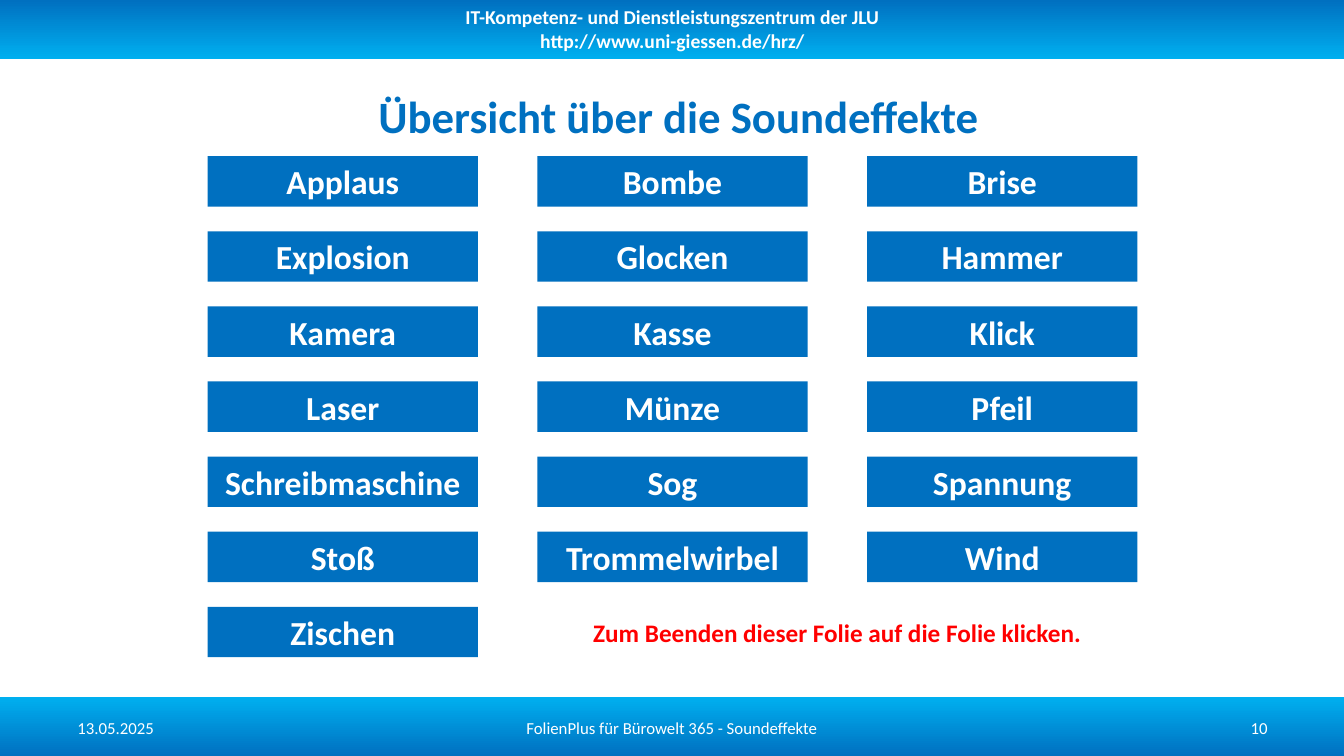
from pptx import Presentation
from pptx.dml.color import RGBColor
from pptx.enum.shapes import MSO_SHAPE as Shape
from pptx.enum.text import MSO_ANCHOR as Anchor, PP_ALIGN as Align
from pptx.util import Inches, Pt

BLUE, LIGHT_BLUE, WHITE, RED = "0070C0", "00B0F0", "FFFFFF", "FF0000"
WIDTH, HEIGHT, BAND_HEIGHT = 13.33, 7.5, 0.59
SOUNDS = [
    "Applaus", "Bombe", "Brise",
    "Explosion", "Glocken", "Hammer",
    "Kamera", "Kasse", "Klick",
    "Laser", "Münze", "Pfeil",
    "Schreibmaschine", "Sog", "Spannung",
    "Stoß", "Trommelwirbel", "Wind",
    "Zischen",
]


def color(value):
    """Turn a hex string into a colour."""
    return RGBColor.from_string(value)


def write(shape, text, size, text_color, bold=True, align=Align.CENTER, anchor=Anchor.MIDDLE):
    """Put formatted text into a shape."""
    frame = shape.text_frame
    frame.word_wrap = True
    frame.vertical_anchor = anchor
    paragraph = frame.paragraphs[0]
    paragraph.text = text
    paragraph.alignment = align
    font_format = {"name": "Calibri", "size": Pt(size), "bold": bold}
    for run in paragraph.runs:
        for name, value in font_format.items():
            setattr(run.font, name, value)
        run.font.color.rgb = color(text_color)


def add_text(slide, box, text, size, text_color, **options):
    """Add a text box at the given left, top, width and height."""
    shape = slide.shapes.add_textbox(*map(Inches, box))
    write(shape, text, size, text_color, **options)


def add_rectangle(slide, box):
    """Add a rectangle without line or shadow."""
    shape = slide.shapes.add_shape(Shape.RECTANGLE, *map(Inches, box))
    shape.shadow.inherit = False
    shape.line.fill.background()
    return shape


def add_band(slide, box, stop_colors):
    """Add a band with a gradient from top to bottom."""
    fill = add_rectangle(slide, box).fill
    fill.gradient()
    fill.gradient_angle = 270
    for stop, stop_color in zip(fill.gradient_stops, stop_colors):
        stop.color.rgb = color(stop_color)


def add_header(slide, box):
    """Add the top band with the name of the centre."""
    left, top, width, height = box
    add_band(slide, box, (BLUE, LIGHT_BLUE))
    text = "IT-Kompetenz- und Dienstleistungszentrum der JLU\nhttp://www.uni-giessen.de/hrz/"
    add_text(slide, (left + 3.7, top, 5.94, 0.57), text, 14, WHITE, anchor=Anchor.TOP)


def add_footer(slide, box):
    """Add the bottom band with date, topic and slide number."""
    left, top, width, height = box
    add_band(slide, box, (LIGHT_BLUE, BLUE))
    entries = [
        (0.67, 2.12, "13.05.2025", Align.LEFT),
        (2.73, 7.87, "FolienPlus für Bürowelt 365 - Soundeffekte", Align.CENTER),
        (11.08, 1.59, "10", Align.RIGHT),
    ]
    for offset, entry_width, text, align in entries:
        entry_box = (left + offset, top + 0.11, entry_width, 0.4)
        add_text(slide, entry_box, text, 12, WHITE, bold=False, align=align)


def add_sound_buttons(slide, box, columns=3):
    """Add the grid of sound buttons and the closing hint beside the last one."""
    left, top, width, height = box
    button_width, button_height = 2.68, 0.5
    rows = -(-len(SOUNDS) // columns)
    column_step = (width - button_width) / (columns - 1)
    row_step = (height - button_height) / (rows - 1)
    for index, sound in enumerate(SOUNDS):
        row, column = divmod(index, columns)
        button_box = (left + column * column_step, top + row * row_step, button_width, button_height)
        button = add_rectangle(slide, button_box)
        button.fill.solid()
        button.fill.fore_color.rgb = color(BLUE)
        write(button, sound, 24, WHITE)
    hint_box = (left + column_step, top + height - 0.45, width - column_step, 0.4)
    add_text(slide, hint_box, "Zum Beenden dieser Folie auf die Folie klicken.", 18, RED)


def main():
    """Build and save the presentation."""
    presentation = Presentation()
    presentation.slide_width, presentation.slide_height = Inches(WIDTH), Inches(HEIGHT)
    slide = presentation.slides.add_slide(presentation.slide_layouts[6])
    add_header(slide, (0, 0, WIDTH, BAND_HEIGHT))
    add_footer(slide, (0, HEIGHT - BAND_HEIGHT, WIDTH, BAND_HEIGHT))
    add_text(slide, (0.54, 0.7, 12.38, 0.9), "Übersicht über die Soundeffekte", 32, BLUE)
    add_sound_buttons(slide, (2.06, 1.55, 9.22, 4.97))
    presentation.save("out.pptx")


if __name__ == "__main__":
    main()
